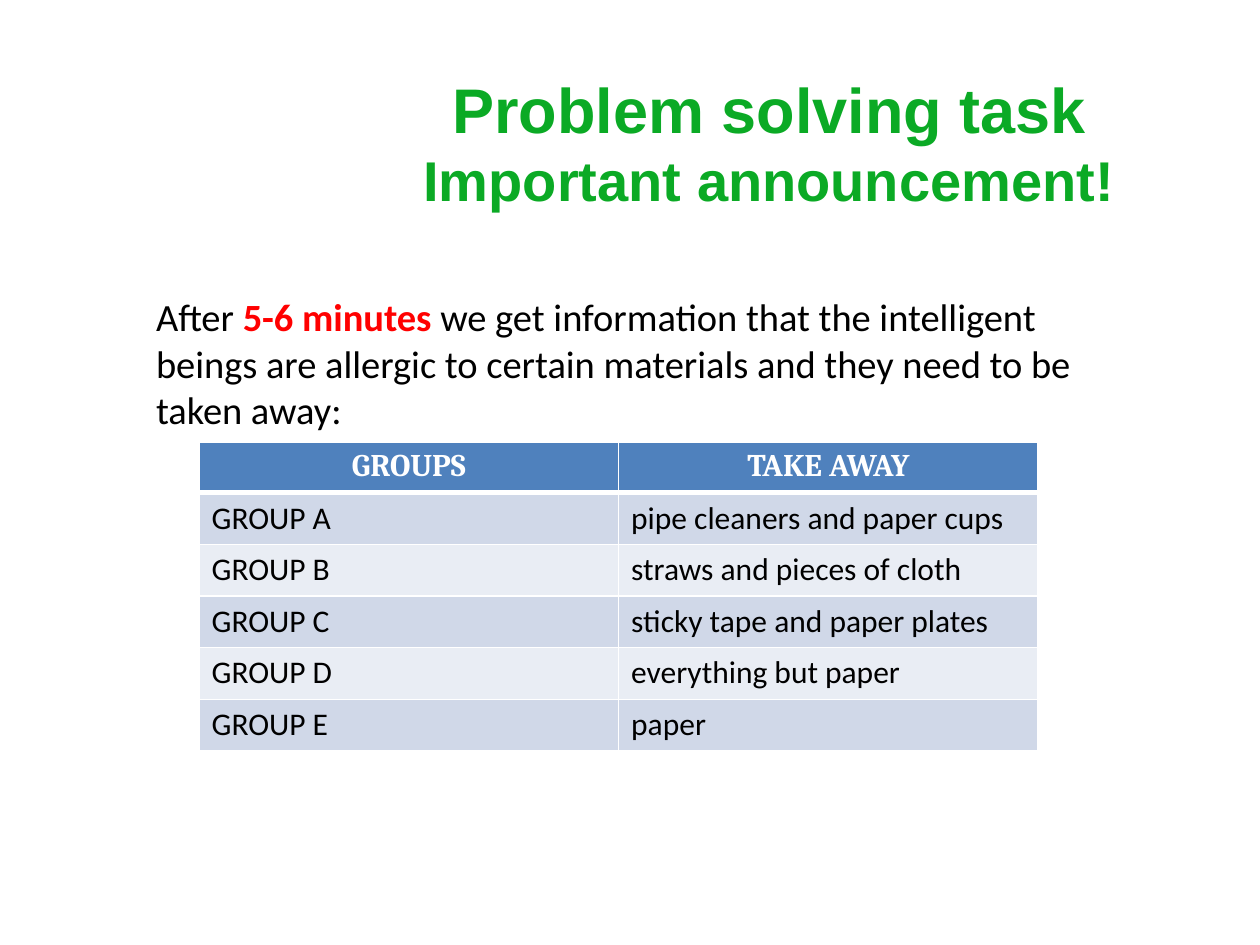
from lxml import etree
from pptx import Presentation
from pptx.dml.color import RGBColor
from pptx.enum import text
from pptx.oxml import ns
from pptx.util import Inches, Pt

TITLE = [("Problem solving task", 36), ("Important announcement!", 32)]
MESSAGE = [
    ("After ", "000000", False),
    ("5-6 minutes ", "FF0000", True),
    ("we get information that the intelligent beings are allergic to certain "
     "materials and they need to be taken away:", "000000", False),
]
ROWS = [
    ("GROUPS", "TAKE AWAY"),
    ("GROUP A", "pipe cleaners and paper cups"),
    ("GROUP B", "straws and pieces of cloth"),
    ("GROUP C", "sticky tape and paper plates"),
    ("GROUP D", "everything but paper"),
    ("GROUP E", "paper"),
]
HEADER_FILL = "4F81BD"
BAND_FILLS = ["E9EDF4", "D0D8E8"]
HEADER_HEIGHT, ROW_HEIGHT, COLUMN_WIDTH = 0.39, 0.41, 3.33


def color(value):
    return RGBColor.from_string(value)


def style(span, name, size, ink, bold=False):
    span.font.name = name
    span.font.size = Pt(size)
    span.font.color.rgb = color(ink)
    span.font.bold = bold


def add_box(page, left, top, width, height):
    box = page.shapes.add_textbox(*map(Inches, (left, top, width, height)))
    box.text_frame.word_wrap = True
    return box.text_frame


def add_borders(cell, bottom_width):
    properties = cell._tc.get_or_add_tcPr()
    for index, (side, width) in enumerate(
            [("lnL", 1), ("lnR", 1), ("lnT", 1), ("lnB", bottom_width)]):
        line = etree.Element(ns.qn(f"a:{side}"), w=str(Pt(width)))
        fill = etree.SubElement(line, ns.qn("a:solidFill"))
        etree.SubElement(fill, ns.qn("a:srgbClr"), val="FFFFFF")
        properties.insert(index, line)


def add_title(page):
    frame = add_box(page, 2.95, 0.62, 6.31, 1.01)
    frame.vertical_anchor = text.MSO_ANCHOR.MIDDLE
    frame.text = "\n".join(words for words, size in TITLE)
    for para, (words, size) in zip(frame.paragraphs, TITLE):
        para.alignment = text.PP_ALIGN.CENTER
        style(para.runs[0], "Arial", size, "0BAA25", True)


def add_message(page):
    para = add_box(page, 1.14, 2.28, 7.55, 1.2).paragraphs[0]
    for words, ink, bold in MESSAGE:
        span = para.add_run()
        span.text = words
        style(span, "Calibri", 22, ink, bold)


def add_groups_table(page):
    heights = [HEADER_HEIGHT] + [ROW_HEIGHT] * (len(ROWS) - 1)
    columns = len(ROWS[0])
    table = page.shapes.add_table(
        len(ROWS), columns, Inches(1.58), Inches(3.51),
        Inches(COLUMN_WIDTH * columns), Inches(sum(heights))).table
    for row_index, (row, height) in enumerate(zip(ROWS, heights)):
        table.rows[row_index].height = Inches(height)
        header = row_index == 0
        for column_index, words in enumerate(row):
            cell = table.cell(row_index, column_index)
            cell.fill.solid()
            cell.fill.fore_color.rgb = color(
                HEADER_FILL if header else BAND_FILLS[row_index % 2])
            add_borders(cell, 3 if header else 1)
            para = cell.text_frame.paragraphs[0]
            para.text = words
            if header:
                para.alignment = text.PP_ALIGN.CENTER
                style(para.runs[0], "Cambria", 18, "FFFFFF", True)
            else:
                style(para.runs[0], "Calibri", 18, "000000")


def main():
    deck = Presentation()
    deck.slide_width, deck.slide_height = Inches(10), Inches(7.5)
    page = deck.slides.add_slide(deck.slide_layouts[6])
    add_title(page)
    add_message(page)
    add_groups_table(page)
    deck.save("out.pptx")


if __name__ == "__main__":
    main()
